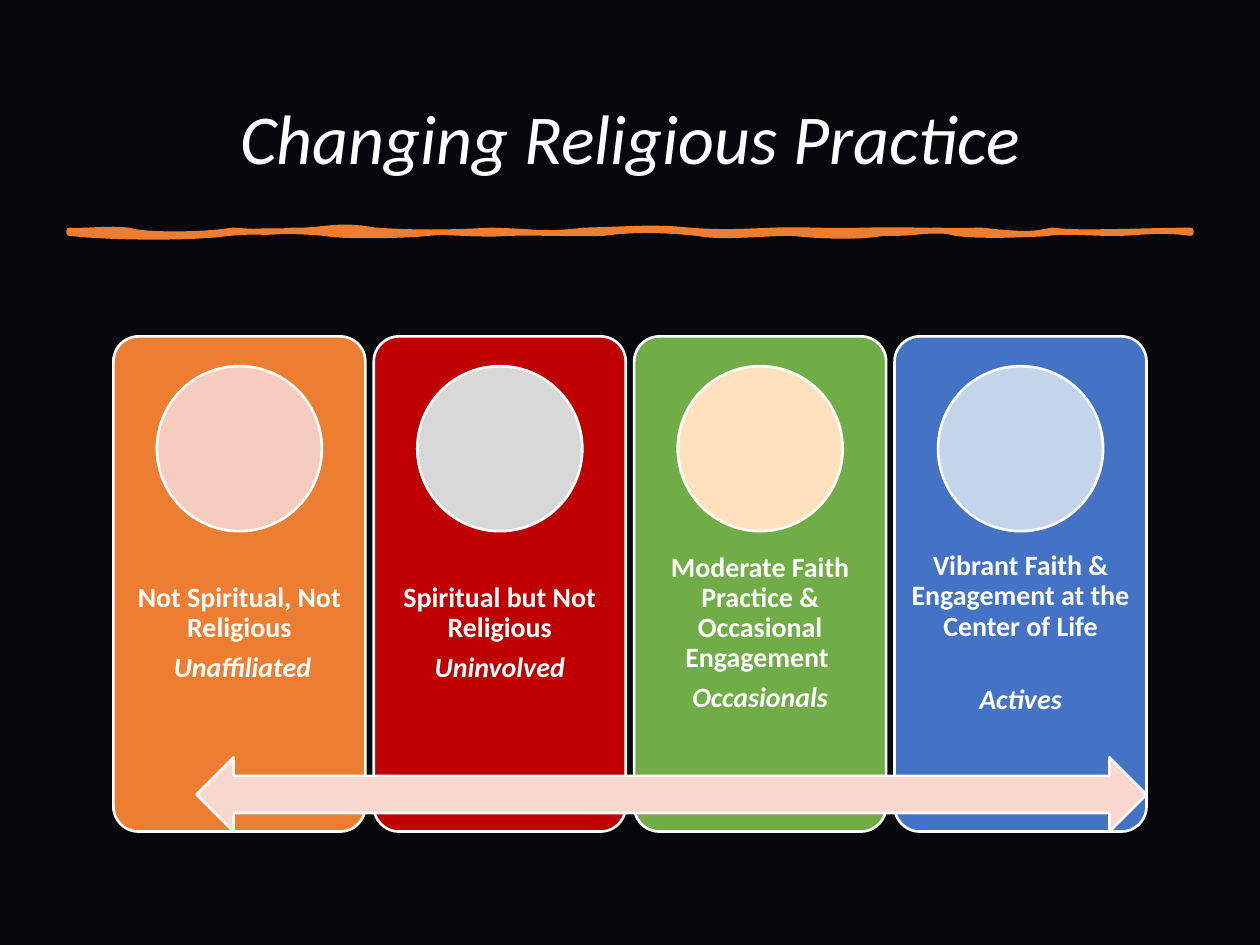
from typing import NamedTuple

from pptx import Presentation
from pptx.dml.color import RGBColor
from pptx.enum.shapes import MSO_SHAPE
from pptx.enum.text import MSO_ANCHOR, PP_ALIGN
from pptx.util import Inches, Pt

ROUNDED, OVAL, ARROW = MSO_SHAPE.ROUNDED_RECTANGLE, MSO_SHAPE.OVAL, MSO_SHAPE.LEFT_RIGHT_ARROW
MIDDLE, CENTER = MSO_ANCHOR.MIDDLE, PP_ALIGN.CENTER
WIDTH, HEIGHT = 10, 7.5
FONT, WHITE, ORANGE = "Calibri", "FFFFFF", "ED7D31"

# Card grid: four columns spread evenly between the left and right edges
LEFT, RIGHT, TOP, COLS = 0.9, 9.1, 2.67, 4
CARD_W, CARD_H, CIRCLE = 2, 3.93, 1.31
PITCH = (RIGHT - LEFT - CARD_W) / (COLS - 1)


class Box(NamedTuple):
    x: float
    y: float
    w: float
    h: float

    def emu(self):
        return [Inches(v) for v in self]


class Card(NamedTuple):
    heading: str
    label: str
    fill: str
    circle: str
    gap: float = 0  # extra points above the label


class Curve(NamedTuple):
    """A Bezier piece that ends on the edge line of the stroke."""
    x1: float
    y1: float
    x2: float
    y2: float
    x: float


CARDS = [
    Card("Not Spiritual, Not Religious", " Unaffiliated", ORANGE, "F6CCBE"),
    Card("Spiritual but Not Religious", "Uninvolved", "C00000", "D8D8D8"),
    Card("Moderate Faith Practice & Occasional Engagement ", "Occasionals", "70AD47", "FFE2BD"),
    Card("Vibrant Faith & Engagement at the Center of Life", "Actives", "4472C4", "C4D5EB", 19),
]

# Hand-drawn rule: upper edge left to right, lower edge right to left
RULE_X, UPPER_Y, LOWER_Y = (0.55, 9.45), 1.83, 1.85
UPPER = [Curve(*c) for c in (
    (0.64, 1.84, 0.89, 1.81, 1.02), (1.14, 1.87, 1.6, 1.87, 1.85),
    (2.13, 1.85, 2.16, 1.84, 2.33), (2.54, 1.84, 2.68, 1.77, 2.98),
    (3.31, 1.85, 3.52, 1.85, 3.9), (4.31, 1.84, 4.28, 1.87, 4.64),
    (5.03, 1.82, 5.2, 1.8, 5.47), (5.73, 1.85, 5.88, 1.84, 6.13),
    (6.41, 1.82, 6.51, 1.84, 6.87), (7.21, 1.82, 7.41, 1.84, 7.79),
    (8.17, 1.87, 8.19, 1.86, 8.35), (8.55, 1.86, 9.13, 1.83, 9.45))]
LOWER = [Curve(*c) for c in (
    (9.2, 1.81, 8.95, 1.86, 8.8), (8.63, 1.85, 8.45, 1.83, 8.32),
    (8.22, 1.86, 7.77, 1.88, 7.58), (7.43, 1.8, 7.27, 1.86, 7.02),
    (6.76, 1.89, 6.5, 1.87, 6.28), (6.07, 1.85, 5.7, 1.89, 5.53),
    (5.32, 1.83, 5.08, 1.81, 4.79), (4.5, 1.86, 4.35, 1.84, 4.05),
    (3.74, 1.87, 3.56, 1.83, 3.4), (3.23, 1.87, 2.71, 1.88, 2.57),
    (2.38, 1.83, 2.06, 1.83, 1.82), (1.56, 1.89, 0.91, 1.89, 0.55))]


def rgb(color: str) -> RGBColor:
    return RGBColor.from_string(color)


def paint(sp, fill: str, line: str, width: float) -> None:
    sp.shadow.inherit = False
    sp.fill.solid()
    sp.fill.fore_color.rgb = rgb(fill)
    sp.line.color.rgb = rgb(line)
    sp.line.width = Pt(width)


def add_shape(s, kind, box: Box, fill: str, adjust: float | None = None) -> None:
    sp = s.shapes.add_shape(kind, *box.emu())
    paint(sp, fill, WHITE, 1.5)
    if adjust is not None:
        sp.adjustments[0] = adjust


def add_frame(s, box: Box, side: float, top: float):
    tf = s.shapes.add_textbox(*box.emu()).text_frame
    tf.word_wrap = True
    tf.vertical_anchor = MIDDLE
    tf.margin_left = tf.margin_right = Inches(side)
    tf.margin_top = tf.margin_bottom = Inches(top)
    return tf


def write(p, text: str, *, size: float, bold=False, italic=False, before=0, after=0) -> None:
    p.alignment, p.line_spacing = CENTER, 0.9
    p.space_before, p.space_after = Pt(before), Pt(after)
    r = p.add_run()
    r.text = text
    f = r.font
    f.name, f.size, f.bold, f.italic = FONT, Pt(size), bold, italic
    f.color.rgb = rgb(WHITE)


def sample(curves: list[Curve], x0: float, edge: float, steps: int = 8):
    """Points along a chain of Bezier pieces."""
    points = []
    for c in curves:
        for i in range(1, steps + 1):
            t = i / steps
            a, b, d, e = (1 - t) ** 3, 3 * t * (1 - t) ** 2, 3 * t * t * (1 - t), t ** 3
            points.append((a * x0 + b * c.x1 + d * c.x2 + e * c.x,
                           (a + e) * edge + b * c.y1 + d * c.y2))
        x0 = c.x
    return points


def add_rule(s) -> None:
    start, end = RULE_X
    points = sample(UPPER, start, UPPER_Y) + [(end, LOWER_Y)] + sample(LOWER, end, LOWER_Y)
    fb = s.shapes.build_freeform(Inches(start), Inches(UPPER_Y))
    fb.add_line_segments([(Inches(x), Inches(y)) for x, y in points], close=True)
    paint(fb.convert_to_shape(), ORANGE, ORANGE, 3.25)


def add_card(s, col: int, card: Card) -> None:
    x = LEFT + col * PITCH
    add_shape(s, ROUNDED, Box(x, TOP, CARD_W, CARD_H), card.fill, 0.1)
    tf = add_frame(s, Box(x, TOP + 0.4 * CARD_H, CARD_W, 0.4 * CARD_H), 0.12, 0.12)
    write(tf.paragraphs[0], card.heading, size=16, bold=True, after=5.6)
    write(tf.add_paragraph(), card.label, size=16, bold=True, italic=True,
          before=card.gap, after=5.6)
    add_shape(s, OVAL, Box(x + (CARD_W - CIRCLE) / 2, TOP + 0.06 * CARD_H, CIRCLE, CIRCLE),
              card.circle)


def main() -> None:
    prs = Presentation()
    prs.slide_width, prs.slide_height = Inches(WIDTH), Inches(HEIGHT)
    s = prs.slides.add_slide(prs.slide_layouts[6])
    s.background.fill.solid()
    s.background.fill.fore_color.rgb = rgb("07080B")

    # Title and rule
    tf = add_frame(s, Box(0.69, 0.4, WIDTH - 2 * 0.69, 1.45), 0.1, 0.05)
    write(tf.paragraphs[0], "Changing Religious Practice", size=40, italic=True)
    add_rule(s)

    # Cards, with the spectrum arrow across them
    for col, card in enumerate(CARDS):
        add_card(s, col, card)
    arrow_x, arrow_h = 1.56, 0.15 * CARD_H
    add_shape(s, ARROW, Box(arrow_x, TOP + CARD_H - arrow_h, RIGHT - arrow_x, arrow_h), "F8D7CE")

    prs.save("out.pptx")


if __name__ == "__main__":
    main()
